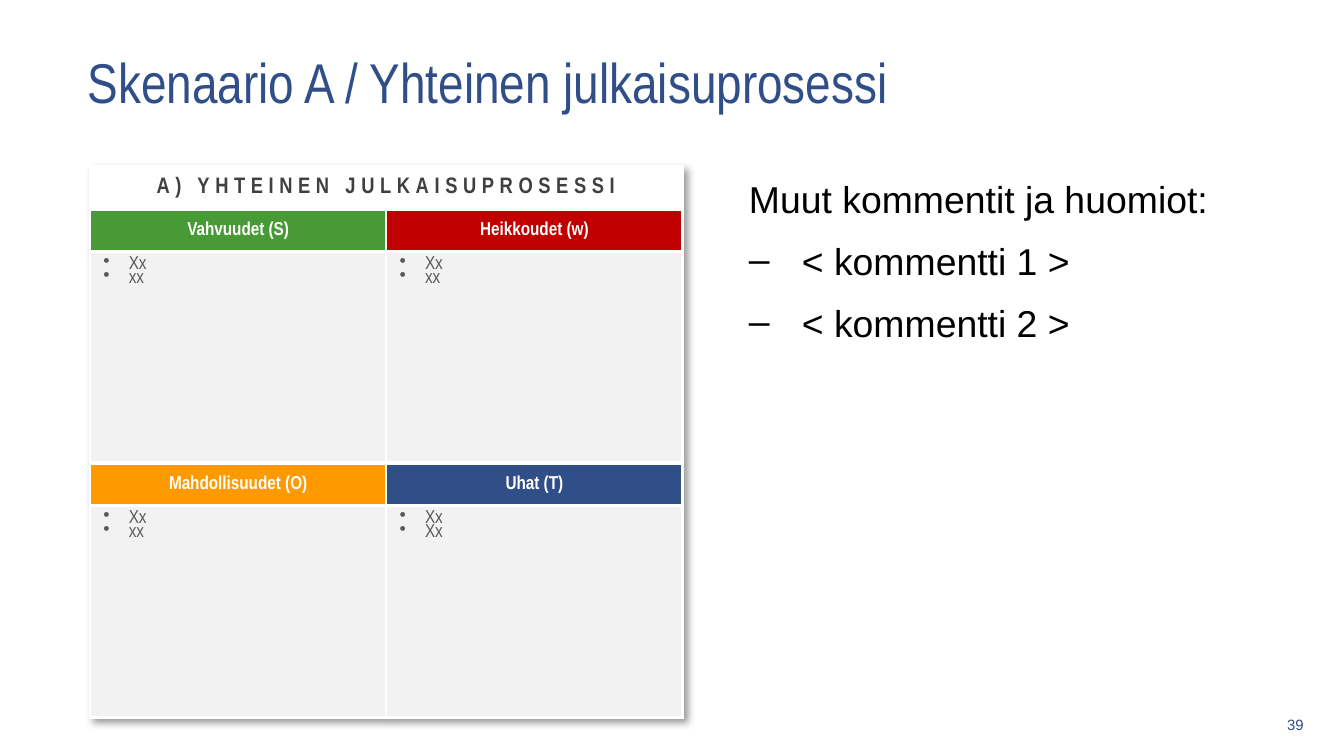
import dataclasses

import pptx
import pptx.dml.color
import pptx.enum.text
import pptx.oxml
import pptx.oxml.ns
import pptx.util

Cm, Pt = pptx.util.Cm, pptx.util.Pt
ALIGN = pptx.enum.text.PP_ALIGN
ANCHOR = pptx.enum.text.MSO_ANCHOR
A_NS = pptx.oxml.ns.nsdecls("a")


@dataclasses.dataclass(frozen=True)
class Theme:
    narrow: str = "Arial Narrow"
    sans: str = "Arial"
    navy: str = "304E88"
    black: str = "000000"
    white: str = "FFFFFF"
    heading: str = "404040"
    muted: str = "595959"
    panel: str = "F2F2F2"
    green: str = "479A36"
    red: str = "C00000"
    orange: str = "FF9900"
    title_size: int = 30
    body_size: int = 20
    heading_size: int = 12
    cell_size: int = 10
    number_size: int = 8


THEME = Theme()

# label, colour, points; in reading order
SWOT = [
    ("Vahvuudet (S)", THEME.green, ["Xx", "xx"]),
    ("Heikkoudet (w)", THEME.red, ["Xx", "xx"]),
    ("Mahdollisuudet (O)", THEME.orange, ["Xx", "xx"]),
    ("Uhat (T)", THEME.navy, ["Xx", "Xx"]),
]


def place(sp, box):
    sp.left, sp.top, sp.width, sp.height = (Cm(v) for v in box)


def style(p, font, size, color, bold=False, align=ALIGN.LEFT):
    p.alignment = align
    for r in p.runs:
        r.font.name = font
        r.font.size = Pt(size)
        r.font.bold = bold
        r.font.color.rgb = pptx.dml.color.RGBColor.from_string(color)


def set_bullet(p, char=None, indent=0):
    """Give the paragraph a hanging bullet, or none."""
    pPr = p._p.get_or_add_pPr()
    pPr.set("marL", str(Cm(indent)))
    pPr.set("indent", str(-Cm(indent)))
    tag = f'<a:buChar {A_NS} char="{char}"/>' if char else f"<a:buNone {A_NS}/>"
    pPr.append(pptx.oxml.parse_xml(tag))


def fill_cell(cell, color):
    cell.fill.solid()
    cell.fill.fore_color.rgb = pptx.dml.color.RGBColor.from_string(color)
    for i, (side, width) in enumerate((("L", 1.5), ("R", 1.5), ("T", 2.25), ("B", 2.25))):
        cell._tc.get_or_add_tcPr().insert(i, pptx.oxml.parse_xml(
            f'<a:ln{side} {A_NS} w="{Pt(width)}"><a:solidFill>'
            f'<a:srgbClr val="{THEME.white}"/></a:solidFill></a:ln{side}>'))


def header_cell(cell, text, size, color, fill):
    fill_cell(cell, fill)
    cell.vertical_anchor = ANCHOR.MIDDLE
    cell.text_frame.text = text
    style(cell.text_frame.paragraphs[0], THEME.narrow, size, color, True, ALIGN.CENTER)


def points_cell(cell, points):
    fill_cell(cell, THEME.panel)
    cell.text_frame.text = "\n".join(points)
    for p in cell.text_frame.paragraphs:
        set_bullet(p, "•", 0.48)
        p.line_spacing = 0.8
        style(p, THEME.narrow, THEME.cell_size, THEME.muted)


def add_table_shadow(table):
    table._tbl.tblPr.insert(0, pptx.oxml.parse_xml(
        f'<a:effectLst {A_NS}><a:outerShdw blurRad="{Pt(4)}" dist="{Pt(3)}" '
        'dir="2700000" algn="tl" rotWithShape="0"><a:srgbClr val="000000">'
        '<a:alpha val="40000"/></a:srgbClr></a:outerShdw></a:effectLst>'))


def add_title(slide, box):
    sp = slide.shapes.title
    place(sp, box)
    tf = sp.text_frame
    tf.text = "Skenaario A / Yhteinen julkaisuprosessi"
    tf.auto_size = pptx.enum.text.MSO_AUTO_SIZE.NONE
    tf.vertical_anchor = ANCHOR.MIDDLE
    style(tf.paragraphs[0], THEME.narrow, THEME.title_size, THEME.navy)


def add_swot(slide, box):
    table = slide.shapes.add_table(5, 2, *(Cm(v) for v in box)).table
    table.first_row = table.horz_banding = False
    add_table_shadow(table)
    width, height = box[2:]
    label_height = 0.8
    points_height = (height - 3 * label_height) / 2
    for col in table.columns:
        col.width = Cm(width / 2)
    for i, row in enumerate(table.rows):
        row.height = Cm(points_height if i in (2, 4) else label_height)

    heading = table.cell(0, 0)
    heading.merge(table.cell(0, 1))
    header_cell(heading, "A) YHTEINEN JULKAISUPROSESSI", THEME.heading_size,
                THEME.heading, THEME.white)
    heading.text_frame.paragraphs[0].runs[0]._r.get_or_add_rPr().set("spc", "300")
    fill_cell(table.cell(0, 1), THEME.white)

    for i, (label, color, points) in enumerate(SWOT):
        row, col = 1 + i // 2 * 2, i % 2
        header_cell(table.cell(row, col), label, THEME.cell_size, THEME.white, color)
        points_cell(table.cell(row + 1, col), points)


def add_comments(slide, box):
    sp = slide.placeholders[1]
    place(sp, box)
    tf = sp.text_frame
    tf.text = "Muut kommentit ja huomiot:\n< kommentti 1 >\n< kommentti 2 >"
    tf.auto_size = pptx.enum.text.MSO_AUTO_SIZE.NONE
    for i, p in enumerate(tf.paragraphs):
        if i:
            set_bullet(p, "‒", 1)
        else:
            set_bullet(p)
        p.space_before = Pt(0)
        p.space_after = Pt(8)
        p.line_spacing = 1.05
        style(p, THEME.sans, THEME.body_size, THEME.black)


def add_slide_number(slide, box):
    tf = slide.shapes.add_textbox(*(Cm(v) for v in box)).text_frame
    tf.word_wrap = True
    tf.vertical_anchor = ANCHOR.MIDDLE
    tf.text = "39"
    style(tf.paragraphs[0], THEME.sans, THEME.number_size, THEME.navy, align=ALIGN.RIGHT)


def main():
    prs = pptx.Presentation()
    prs.slide_width, prs.slide_height = Cm(25.4), Cm(14.28)
    slide = prs.slides.add_slide(prs.slide_layouts[1])
    add_title(slide, (1.4, 0.3, 20.5, 2.46))
    add_swot(slide, (1.7, 3.15, 11.2, 10.4))
    add_comments(slide, (13.9, 3.15, 9.68, 9.7))
    add_slide_number(slide, (23.57, 13.39, 1.32, 0.6))
    prs.save("out.pptx")


if __name__ == "__main__":
    main()
